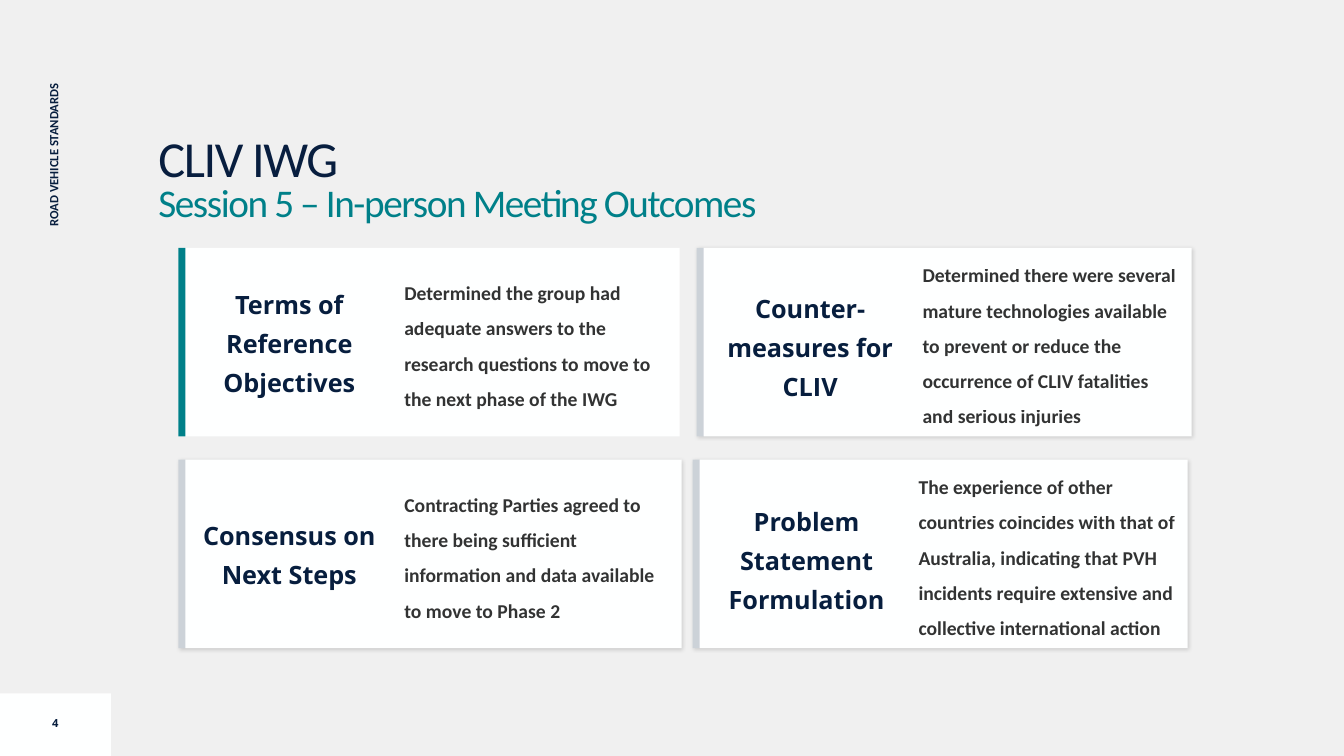
from lxml import etree
from pptx import Presentation
from pptx.dml.color import RGBColor
from pptx.enum.shapes import MSO_SHAPE
from pptx.enum.text import MSO_ANCHOR as Anchor, MSO_AUTO_SIZE as AutoSize, PP_ALIGN as Align
from pptx.oxml import parse_xml
from pptx.oxml.ns import nsdecls, qn
from pptx.util import Inches, Pt

COLORS = {
    "background": "F0F0F0",
    "card": "FEFFFF",
    "navy": "071E3E",
    "title": "081E3F",
    "teal": "008089",
    "body": "000000",
}
BODY_FONT, HEADING_FONT = "Calibri", "Open Sans"
CARD_HEIGHT, BAR_WIDTH = 1.87, 0.07
TOP_ROW, BOTTOM_ROW = 2.46, 4.56

# Card left, top, width; heading left, top, width; heading lines; body; highlighted
CARDS = [
    ((1.77, BOTTOM_ROW, 4.99), (1.7, 5.02, 2.34), ["Consensus on Next Steps"],
     "Contracting Parties agreed to there being sufficient information and data "
     "available to move to Phase 2", False),
    ((1.77, TOP_ROW, 4.97), (1.7, 2.73, 2.34), ["Terms of Reference", "Objectives"],
     "Determined the group had adequate answers to the research questions to move to "
     "the next phase of the IWG", True),
    ((6.91, TOP_ROW, 4.91), (7.09, 2.77, 1.89), ["Counter-measures for CLIV"],
     "Determined there were several mature technologies available to prevent or reduce "
     "the occurrence of CLIV fatalities and serious injuries", False),
    ((6.87, BOTTOM_ROW, 4.91), (6.83, 4.88, 2.34), ["Problem", "Statement", "Formulation"],
     "The experience of other countries coincides with that of Australia, indicating that "
     "PVH incidents require extensive and collective international action", False),
]


class SlideBuilder:
    def __init__(self, presentation):
        self.slide = presentation.slides.add_slide(presentation.slide_layouts[5])
        fill = self.slide.background.fill
        fill.solid()
        fill.fore_color.rgb = RGBColor.from_string(COLORS["background"])

    def set_alpha(self, properties, percent):
        color = properties.find(qn("a:solidFill")).find(qn("a:srgbClr"))
        etree.SubElement(color, qn("a:alpha")).set("val", str(percent * 1000))

    def style_run(self, run, size, font, color, bold=True):
        run.font.size, run.font.name, run.font.bold = Pt(size), font, bold
        run.font.color.rgb = RGBColor.from_string(COLORS[color])

    def set_margins(self, frame, left, top, right, bottom):
        frame.margin_left, frame.margin_top = Inches(left), Inches(top)
        frame.margin_right, frame.margin_bottom = Inches(right), Inches(bottom)

    def rectangle(self, shapes, box, color, alpha=None):
        shape = shapes.add_shape(MSO_SHAPE.RECTANGLE, *map(Inches, box))
        shape.shadow.inherit = False
        shape.fill.solid()
        shape.fill.fore_color.rgb = RGBColor.from_string(COLORS[color])
        shape.line.fill.background()
        if alpha:
            self.set_alpha(shape._element.spPr, alpha)
        return shape

    def add_shadow(self, shape):
        effects = shape._element.spPr.find(qn("a:effectLst"))
        effects.append(parse_xml(
            f'<a:outerShdw {nsdecls("a")} blurRad="{Pt(3)}" dist="{Pt(1)}" '
            'dir="2700000" algn="tl" rotWithShape="0"><a:srgbClr val="000000">'
            '<a:alpha val="15000"/></a:srgbClr></a:outerShdw>'))

    def text(self, shapes, box, lines, size, font, align=Align.LEFT,
             spacing=1.0, anchor=Anchor.TOP):
        text_box = shapes.add_textbox(*map(Inches, box))
        frame = text_box.text_frame
        frame.word_wrap = True
        frame.vertical_anchor = anchor
        frame.text = "\n".join(lines)
        for paragraph in frame.paragraphs:
            paragraph.alignment, paragraph.line_spacing = align, spacing
            self.style_run(paragraph.runs[0], size, font, "navy")
        return text_box

    def title(self, box, heading, subtitle):
        title = self.slide.shapes.title
        title.left, title.top, title.width, title.height = map(Inches, box)
        frame = title.text_frame
        frame.word_wrap = True
        frame.auto_size = AutoSize.NONE
        frame.vertical_anchor = Anchor.TOP
        self.set_margins(frame, 0, 0.21, 0, 0)
        frame.text = f"{heading}\v{subtitle}"
        paragraph = frame.paragraphs[0]
        paragraph.alignment, paragraph.line_spacing = Align.LEFT, 0.8
        for run, size, color in zip(paragraph.runs, (36, 28), ("title", "teal")):
            self.style_run(run, size, BODY_FONT, color, bold=False)
            run.font._element.set("spc", "-100")

    def card(self, card_box, heading_box, heading, body, highlighted):
        shapes = self.slide.shapes.add_group_shape().shapes
        left, top, width = card_box
        panel = self.rectangle(shapes, (left, top, width, CARD_HEIGHT), "card")
        if not highlighted:
            self.add_shadow(panel)

        # Body text beside the heading
        frame = panel.text_frame
        frame.word_wrap = True
        frame.vertical_anchor = Anchor.MIDDLE
        self.set_margins(frame, 2.24, 0, 0.1, 0.05)
        frame.text = body
        paragraph = frame.paragraphs[0]
        paragraph.alignment, paragraph.line_spacing = Align.LEFT, 1.5
        run = paragraph.runs[0]
        self.style_run(run, 14, BODY_FONT, "body")
        self.set_alpha(run.font._element, 80)

        # Accent bar and heading
        bar_box = (left, top, BAR_WIDTH, CARD_HEIGHT)
        if highlighted:
            self.rectangle(shapes, bar_box, "teal")
        else:
            self.rectangle(shapes, bar_box, "navy", alpha=20)
        height = 0.85 if len(heading) == 1 and heading_box[2] > 2 else 1.24
        self.text(shapes, (*heading_box, height), heading, 18, HEADING_FONT,
                  Align.CENTER, 1.3)


def main():
    presentation = Presentation()
    presentation.slide_width, presentation.slide_height = Inches(13.33), Inches(7.5)
    builder = SlideBuilder(presentation)
    shapes = builder.slide.shapes

    # Side label and page number
    builder.rectangle(shapes, (0, 6.88, 1.1, 0.62), "card")
    label = builder.text(shapes, (-0.72, 0.97, 2.5, 0.25), ["ROAD VEHICLE STANDARDS"],
                         9, BODY_FONT)
    label.rotation = 270
    builder.text(shapes, (0, 6.97, 1.1, 0.4), ["4"], 8, HEADING_FONT,
                 Align.CENTER, anchor=Anchor.MIDDLE)

    # Title and outcome cards
    builder.title((1.57, 1.17, 6.78, 1.37), "CLIV IWG",
                  "Session 5 – In-person Meeting Outcomes")
    for card in CARDS:
        builder.card(*card)

    presentation.save("out.pptx")


if __name__ == "__main__":
    main()
